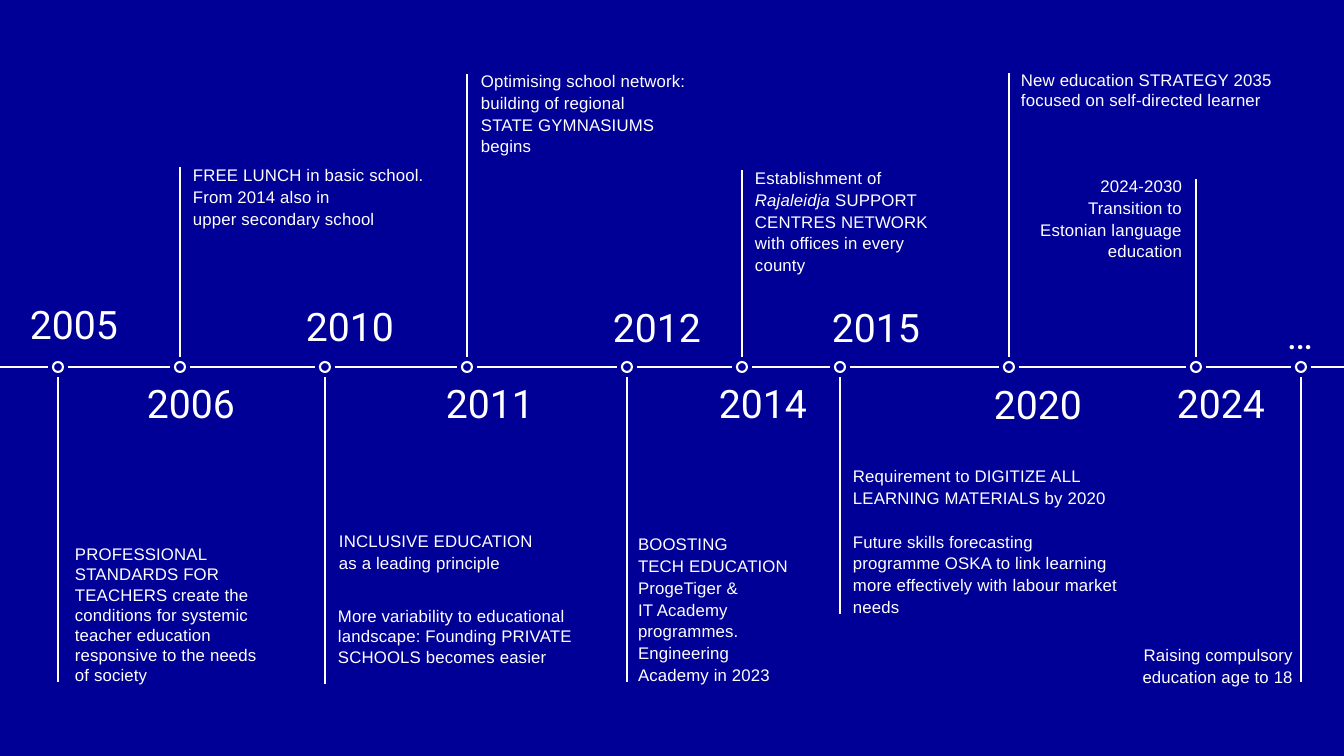
from dataclasses import dataclass

from lxml.etree import SubElement
from pptx import Presentation
from pptx.dml.color import RGBColor
from pptx.enum.shapes import MSO_CONNECTOR as LINK, MSO_SHAPE as SHAPE
from pptx.enum.text import MSO_ANCHOR as ANCHOR, PP_ALIGN as ALIGN
from pptx.oxml.ns import qn
from pptx.util import Pt

PX = 914400 / 100.8
SLIDE_W, SLIDE_H = 1344, 756
NAVY = RGBColor(0x00, 0x00, 0x96)
WHITE = RGBColor(0xFF, 0xFF, 0xFF)
RING = 10
CLEARANCE = 10
YEAR_SIZE = (125, 39)

YEAR_FONT = {"name": "Roboto", "size": Pt(28)}
NOTE_FONT = {"name": "Arial", "size": Pt(12)}
FRAME = {"margin_left": 0, "margin_top": 0, "margin_right": 0,
         "margin_bottom": 0, "word_wrap": True}


@dataclass
class Milestone:
    year: str
    x: int
    stem_end: int
    year_at: tuple
    align: ALIGN = ALIGN.LEFT


@dataclass
class Note:
    box: tuple
    paragraphs: list
    leading: float = 15.6
    gap: float = 0
    align: ALIGN = ALIGN.LEFT
    anchor: ANCHOR = ANCHOR.TOP


MILESTONES = [
    Milestone("2005", 58, 682, (30, 309)),
    Milestone("2006", 180, 167, (147, 388)),
    Milestone("2010", 325, 684, (306, 311)),
    Milestone("2011", 467, 74, (446, 388)),
    Milestone("2012", 627, 682, (613, 312)),
    Milestone("2014", 742, 170, (719, 388)),
    Milestone("2015", 840, 614, (832, 312)),
    Milestone("2020", 1009, 73, (994, 389)),
    Milestone("2024", 1196, 179, (1177, 388)),
    Milestone("…", 1301, 682, (1188, 319), ALIGN.RIGHT),
]

NOTES = [
    Note((75, 544, 187, 142),
         ["PROFESSIONAL STANDARDS FOR TEACHERS create the conditions for "
          "systemic teacher education responsive to the needs of society"],
         leading=None),
    Note((193, 163, 255, 67),
         ["FREE LUNCH in basic school.", "From 2014 also in",
          "upper secondary school"]),
    Note((339, 529, 211, 43),
         ["INCLUSIVE EDUCATION", "as a leading principle"]),
    Note((338, 606, 239, 82),
         ["More variability to educational landscape: Founding PRIVATE "
          "SCHOOLS becomes easier"], leading=None),
    Note((481, 69, 222, 89),
         ["Optimising school network: building of regional",
          "STATE GYMNASIUMS begins"]),
    Note((638, 529, 156, 156),
         ["BOOSTING", "TECH EDUCATION ProgeTiger &",
          "IT Academy programmes.", "Engineering Academy in 2023"],
         anchor=ANCHOR.BOTTOM),
    Note((755, 166, 178, 112),
         [[("Establishment of ", False), ("Rajaleidja ", True),
           ("SUPPORT CENTRES NETWORK with offices in every county", False)]]),
    Note((853, 461, 266, 156),
         ["Requirement to DIGITIZE ALL LEARNING MATERIALS by 2020",
          "Future skills forecasting programme OSKA to link learning more "
          "effectively with labour market needs"],
         gap=15.6, anchor=ANCHOR.BOTTOM),
    Note((1021, 70, 294, 40),
         ["New education STRATEGY 2035", "focused on self-directed learner"],
         leading=None),
    Note((1026, 174, 156, 111),
         ["2024-2030", "Transition to Estonian language education"],
         align=ALIGN.RIGHT),
    Note((1131, 643, 162, 45),
         ["Raising compulsory", "education age to 18"], align=ALIGN.RIGHT),
]


def px(*lengths):
    return [round(length * PX) for length in lengths]


def apply(target, values):
    for name, value in values.items():
        setattr(target, name, value)


def white_outline(part):
    part.line.color.rgb = WHITE
    part.line.width = Pt(1.5)


def add_line(slide, x1, y1, x2, y2):
    line = slide.shapes.add_connector(LINK.STRAIGHT, *px(x1, y1, x2, y2))
    white_outline(line)
    SubElement(line._element.spPr, qn("a:effectLst"))


def add_label(slide, note, font, tracking=None):
    frame = slide.shapes.add_textbox(*px(*note.box)).text_frame
    apply(frame, FRAME | {"vertical_anchor": note.anchor})
    for index, content in enumerate(note.paragraphs):
        paragraph = frame.add_paragraph() if index else frame.paragraphs[0]
        paragraph.alignment = note.align
        if note.leading:
            paragraph.line_spacing = Pt(note.leading)
        if index and note.gap:
            paragraph.space_before = Pt(note.gap)
        pieces = [(content, False)] if isinstance(content, str) else content
        for words, italic in pieces:
            run = paragraph.add_run()
            run.text = words
            apply(run.font, font | {"italic": italic})
            run.font.color.rgb = WHITE
            if tracking:
                run._r.get_or_add_rPr().set("spc", str(tracking))


def draw_axis(slide, box):
    left, axis_y, width = box
    starts = [left] + [stop.x + CLEARANCE for stop in MILESTONES]
    ends = [stop.x - CLEARANCE for stop in MILESTONES] + [left + width]
    for start, end in zip(starts, ends):
        add_line(slide, start, axis_y, end, axis_y)


def draw_milestone(slide, stop, axis_y):
    ring = slide.shapes.add_shape(
        SHAPE.OVAL, *px(stop.x - RING / 2, axis_y - RING / 2, RING, RING))
    ring.shadow.inherit = False
    ring.fill.background()
    white_outline(ring)
    direction = 1 if stop.stem_end > axis_y else -1
    add_line(slide, stop.x, stop.stem_end,
             stop.x, axis_y + direction * CLEARANCE)
    year = Note(stop.year_at + YEAR_SIZE, [stop.year], leading=27.7,
                align=stop.align)
    add_label(slide, year, YEAR_FONT)


def draw_timeline(slide, box):
    draw_axis(slide, box)
    for stop in MILESTONES:
        draw_milestone(slide, stop, box[1])
    for note in NOTES:
        add_label(slide, note, NOTE_FONT, tracking=10)


def main():
    deck = Presentation()
    deck.slide_width, deck.slide_height = px(SLIDE_W, SLIDE_H)
    slide = deck.slides.add_slide(deck.slide_layouts[6])
    slide.background.fill.solid()
    slide.background.fill.fore_color.rgb = NAVY
    draw_timeline(slide, (0, 367, SLIDE_W))
    deck.save("out.pptx")


if __name__ == "__main__":
    main()
